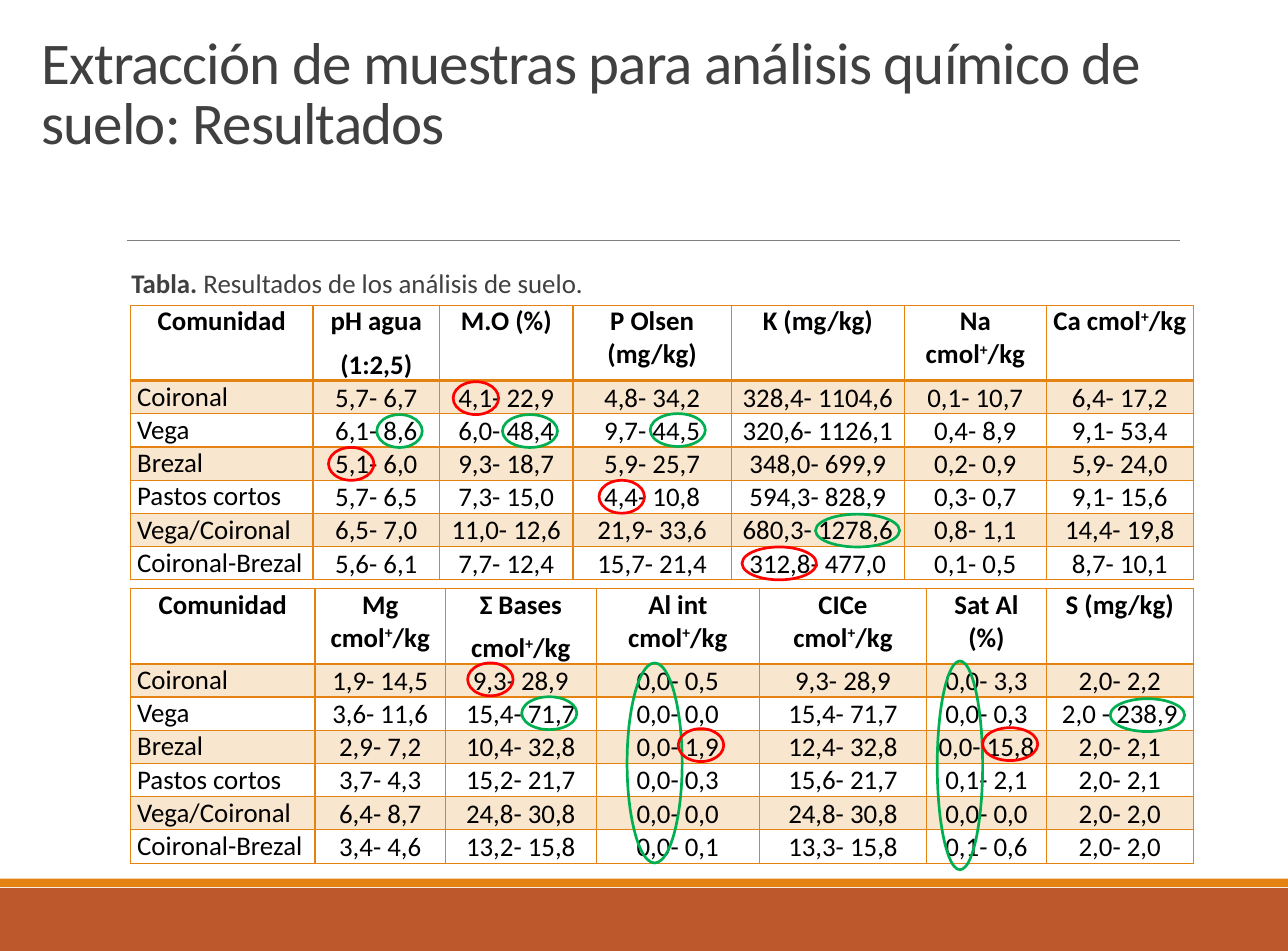
from lxml import etree
from pptx import Presentation
from pptx import util as u
from pptx.dml.color import RGBColor
from pptx.enum import shapes, text
from pptx.oxml import ns

WHITE = RGBColor(0xFF, 0xFF, 0xFF)
BLACK = RGBColor(0x00, 0x00, 0x00)
DARK = RGBColor(0x40, 0x40, 0x40)
GRAY = RGBColor(0x80, 0x80, 0x80)
ORANGE = RGBColor(0xE4, 0x83, 0x12)
RUST = RGBColor(0xBD, 0x58, 0x2C)
RED = RGBColor(0xFF, 0x00, 0x00)
GREEN = RGBColor(0x00, 0xB0, 0x50)

WIDE, HIGH = 133.3, 98.4
CENTER, LEFT = text.PP_ALIGN.CENTER, text.PP_ALIGN.LEFT
TOP, BOTTOM = text.MSO_ANCHOR.TOP, text.MSO_ANCHOR.BOTTOM
SIDES = "left", "top", "right", "bottom"

SITES = ["Coironal", "Vega", "Brezal", "Pastos cortos",
         "Vega/Coironal", "Coironal-Brezal"]

UPPER = {
    "pH agua\n(1:2,5)": ["5,7- 6,7", "6,1- 8,6", "5,1- 6,0",
                         "5,7- 6,5", "6,5- 7,0", "5,6- 6,1"],
    "M.O (%)": ["4,1- 22,9", "6,0- 48,4", "9,3- 18,7",
                "7,3- 15,0", "11,0- 12,6", "7,7- 12,4"],
    "P Olsen (mg/kg)": ["4,8- 34,2", "9,7- 44,5", "5,9- 25,7",
                        "4,4- 10,8", "21,9- 33,6", "15,7- 21,4"],
    "K (mg/kg)": ["328,4- 1104,6", "320,6- 1126,1", "348,0- 699,9",
                  "594,3- 828,9", "680,3- 1278,6", "312,8- 477,0"],
    "Na cmol+/kg": ["0,1- 10,7", "0,4- 8,9", "0,2- 0,9",
                    "0,3- 0,7", "0,8- 1,1", "0,1- 0,5"],
    "Ca cmol+/kg": ["6,4- 17,2", "9,1- 53,4", "5,9- 24,0",
                    "9,1- 15,6", "14,4- 19,8", "8,7- 10,1"],
}

LOWER = {
    "Mg cmol+/kg": ["1,9- 14,5", "3,6- 11,6", "2,9- 7,2",
                    "3,7- 4,3", "6,4- 8,7", "3,4- 4,6"],
    "Ʃ Bases\ncmol+/kg": ["9,3- 28,9", "15,4- 71,7", "10,4- 32,8",
                          "15,2- 21,7", "24,8- 30,8", "13,2- 15,8"],
    "Al int cmol+/kg": ["0,0- 0,5", "0,0- 0,0", "0,0- 1,9",
                        "0,0- 0,3", "0,0- 0,0", "0,0- 0,1"],
    "CICe cmol+/kg": ["9,3- 28,9", "15,4- 71,7", "12,4- 32,8",
                      "15,6- 21,7", "24,8- 30,8", "13,3- 15,8"],
    "Sat Al (%)": ["0,0- 3,3", "0,0- 0,3", "0,0- 15,8",
                   "0,1- 2,1", "0,0- 0,0", "0,1- 0,6"],
    "S (mg/kg)": ["2,0- 2,2", "2,0 - 238,9", "2,0- 2,1",
                  "2,0- 2,1", "2,0- 2,0", "2,0- 2,0"],
}

RINGS = [
    (RED, 34, 46.3, 4.7, 3.4), (GREEN, 39, 42.9, 4.7, 3.4),
    (GREEN, 52, 42.9, 5.7, 3.4), (RED, 46.9, 39.5, 4.7, 3.4),
    (GREEN, 67.3, 42.8, 5.7, 3.4), (RED, 62, 49.7, 4.7, 3.4),
    (GREEN, 84.4, 53.2, 8.7, 3.4), (RED, 76.8, 56.6, 7.7, 3.4),
    (GREEN, 54, 72.1, 5.7, 3.4), (RED, 48.4, 68.6, 4.7, 3.4),
    (GREEN, 64.9, 68.6, 5.7, 20.7), (RED, 70.2, 75.4, 4.7, 3.4),
    (GREEN, 97, 68.4, 4.7, 21.6), (RED, 101.7, 75.3, 5.7, 3.4),
    (GREEN, 114.9, 72.3, 7.7, 3.4),
]


def grid(*cells):
    return [u.Inches(cell / 10) for cell in cells]


def apply(item, style):
    for name, value in style.items():
        setattr(item, name, value)


class Board:
    font = {"name": "Calibri", "size": u.Pt(20), "bold": False}

    def __init__(self, deck):
        self.slide = deck.slides.add_slide(deck.slide_layouts[5])
        self.items = self.slide.shapes
        fill = self.slide.background.fill
        fill.solid()
        fill.fore_color.rgb = WHITE

    def say(self, para, words, color, **style):
        run = para.add_run()
        run.text = words
        apply(run.font, {**self.font, **style})
        run.font.color.rgb = color
        return run

    def title(self, words, *box):
        head = self.items.title
        apply(head, dict(zip(("left", "top", "width", "height"), grid(*box))))
        frame = head.text_frame
        apply(frame, {"vertical_anchor": BOTTOM, "word_wrap": True,
                      "auto_size": text.MSO_AUTO_SIZE.NONE})
        para = frame.paragraphs[0]
        apply(para, {"alignment": LEFT, "line_spacing": 0.85})
        run = self.say(para, words, DARK, size=u.Pt(44))
        run.font._element.set("spc", "-70")

    def label(self, lead, words, *box):
        frame = self.items.add_textbox(*grid(*box)).text_frame
        apply(frame, {"word_wrap": True, "margin_left": u.Inches(0.13),
                      "margin_right": 0})
        para = frame.paragraphs[0]
        para.line_spacing = 0.9
        self.say(para, lead, DARK, bold=True)
        self.say(para, words, DARK)

    def bar(self, color, *box):
        shape = self.items.add_shape(shapes.MSO_SHAPE.RECTANGLE, *grid(*box))
        shape.shadow.inherit = False
        shape.fill.solid()
        shape.fill.fore_color.rgb = color
        shape.line.fill.background()

    def rule(self, *ends):
        line = self.items.add_connector(shapes.MSO_CONNECTOR.STRAIGHT, *grid(*ends))
        line.line.color.rgb = GRAY
        line.line.width = u.Pt(0.5)
        etree.SubElement(line._element.spPr, ns.qn("a:effectLst"))

    def ring(self, color, *box):
        shape = self.items.add_shape(shapes.MSO_SHAPE.OVAL, *grid(*box))
        shape.shadow.inherit = False
        shape.fill.background()
        shape.line.color.rgb = color
        shape.line.width = u.Pt(2)

    def edge(self, cell, heavy):
        props = cell._tc.get_or_add_tcPr()
        for spot, side in enumerate("LRTB"):
            width = u.Pt(2 if side in heavy else 1)
            line = etree.Element(ns.qn(f"a:ln{side}"), w=str(width))
            fill = etree.SubElement(line, ns.qn("a:solidFill"))
            etree.SubElement(fill, ns.qn("a:srgbClr"), val=str(ORANGE))
            props.insert(spot, line)

    def shade(self, cell, band):
        if not band:
            cell.fill.background()
            return
        cell.fill.solid()
        cell.fill.fore_color.rgb = ORANGE
        tint = cell._tc.tcPr.find(".//" + ns.qn("a:srgbClr"))
        etree.SubElement(tint, ns.qn("a:alpha"), val="20000")

    def fill(self, cell, words, row, col):
        value = row and col
        pads = (0.01, 0.01, 0.01, 0) if value else (0.07, 0, 0.07, 0)
        apply(cell, {f"margin_{side}": u.Inches(pad)
                     for side, pad in zip(SIDES, pads)})
        cell.vertical_anchor = BOTTOM if value else TOP
        frame = cell.text_frame
        for spot, line in enumerate(words.split("\n")):
            para = frame.add_paragraph() if spot else frame.paragraphs[0]
            apply(para, {"alignment": LEFT if row and not col else CENTER,
                         "space_after": u.Pt(0 if value else 8)})
            base, plus, rest = line.partition("+")
            for part in filter(None, (base, plus, rest)):
                run = self.say(para, part, BLACK, bold=not row)
                if part == "+":
                    run.font._element.set("baseline", "30000")

    def table(self, data, left, top, cols, head, body):
        rows = [["Comunidad", *data], *zip(SITES, *data.values())]
        highs = [head] + [body] * len(SITES)
        box = grid(left, top, sum(cols), sum(highs))
        table = self.items.add_table(len(rows), len(cols), *box).table
        apply(table, {"first_row": False, "horz_banding": False})
        for col, width in zip(table.columns, grid(*cols)):
            col.width = width
        for row, high in zip(table.rows, grid(*highs)):
            row.height = high
        for y, row in enumerate(rows):
            for x, words in enumerate(row):
                cell = table.cell(y, x)
                self.fill(cell, words, y, x)
                self.shade(cell, y % 2)
                self.edge(cell, {0: "B", 1: "T"}.get(y, ""))


def main():
    deck = Presentation()
    deck.slide_width, deck.slide_height = grid(WIDE, HIGH)
    board = Board(deck)
    board.bar(RUST, 0, 91.9, WIDE, HIGH - 91.9)
    board.bar(ORANGE, 0, 90.9, WIDE, 0.9)
    board.rule(13.1, 24.9, 122.1, 24.9)
    board.title("Extracción de muestras para análisis químico de suelo: Resultados",
                3.3, 4.1, 127.3, 12.6)
    board.label("Tabla. ", "Resultados de los análisis de suelo.",
                12.3, 27.5, 110, 7.2)
    board.table(UPPER, 13.5, 31.6, [18.9, 13.1, 13.8, 16.4, 17.9, 14.7, 15.2], 7, 2.9)
    board.table(LOWER, 13.5, 60.9, [19.1, 13.5, 15.6, 16.9, 17.3, 12.4, 15.2], 7.5, 3.1)
    for ring in RINGS:
        board.ring(*ring)
    deck.save("out.pptx")


if __name__ == "__main__":
    main()
